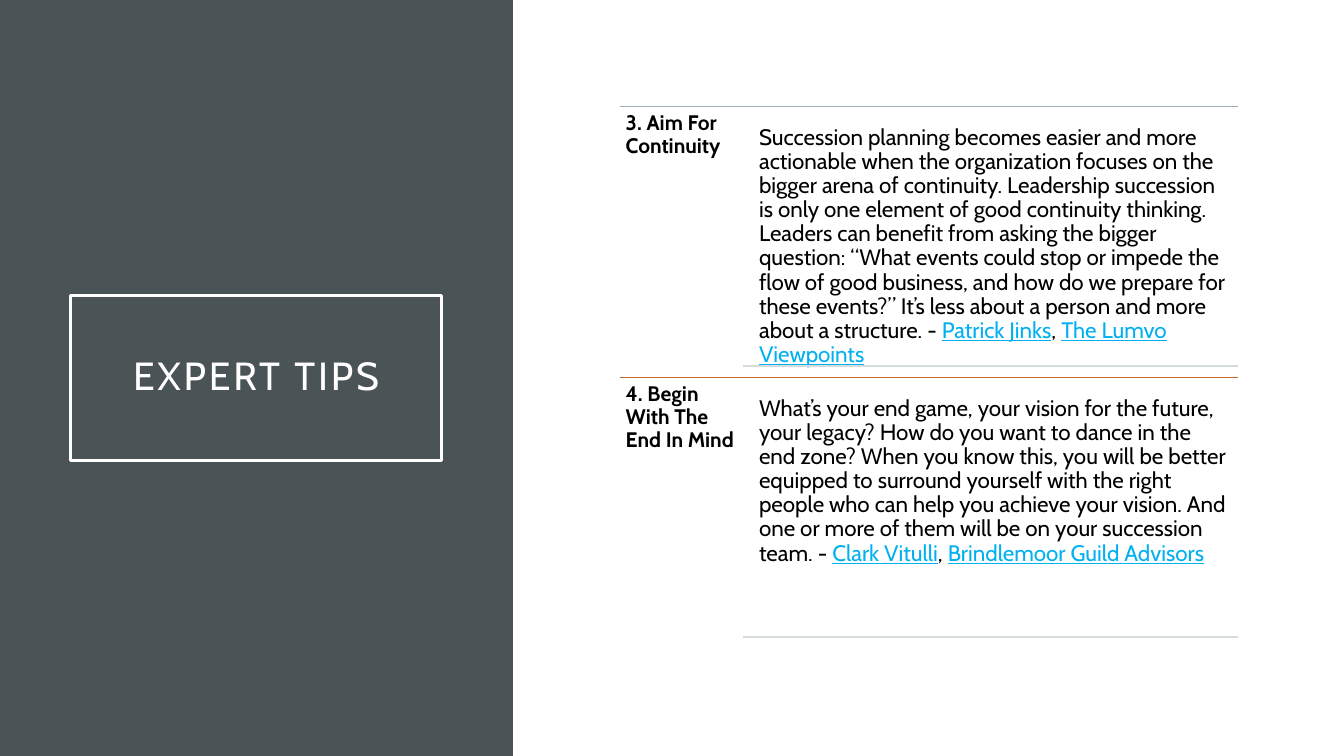
from lxml import etree
from pptx import Presentation
from pptx import util as u
from pptx.dml.color import RGBColor
from pptx.enum import shapes, text
from pptx.oxml.ns import qn

COLORS = {"panel": "4A5356", "white": "FFFFFF", "black": "000000", "link": "00B0F0",
          "blue_rule": "9BAFB5", "orange_rule": "C96731", "grey_rule": "D5DCDE"}


def write(sp, runs, size, inset, color="black", bold=False, align=text.PP_ALIGN.LEFT,
          anchor=text.MSO_ANCHOR.TOP, spacing=None):
    """Fill a shape with one paragraph; runs are (text, is_link) pairs."""
    tf = sp.text_frame
    tf.word_wrap = True
    tf.auto_size = text.MSO_AUTO_SIZE.NONE
    tf.vertical_anchor = anchor
    tf.margin_left = tf.margin_top = tf.margin_right = tf.margin_bottom = u.Cm(inset)
    p = tf.paragraphs[0]
    p.alignment = align
    p.line_spacing = 0.9
    for words, is_link in runs:
        r = p.add_run()
        r.text = words
        r.font.name = "Cabin"
        r.font.size = u.Pt(size)
        r.font.bold = bold
        r.font.underline = is_link
        r.font.color.rgb = RGBColor.from_string(COLORS["link" if is_link else color])
        if spacing:
            r.font._element.set("spc", str(spacing * 100))


def add_rule(left, top, color, width):
    """Draw a horizontal rule that ends at the right edge of the list."""
    rule = s.shapes.add_connector(shapes.MSO_CONNECTOR.STRAIGHT,
                                  u.Cm(left), u.Cm(top), u.Cm(31.19), u.Cm(top))
    rule.line.color.rgb = RGBColor.from_string(COLORS[color])
    rule.line.width = u.Pt(width)
    etree.SubElement(rule._element.spPr, qn("a:effectLst"))


prs = Presentation()
prs.slide_width, prs.slide_height = u.Cm(33.87), u.Cm(19.05)
s = prs.slides.add_slide(prs.slide_layouts[5])

# Dark panel, placed behind the title
panel = s.shapes.add_shape(shapes.MSO_SHAPE.RECTANGLE, 0, 0, u.Cm(12.93), prs.slide_height)
panel.shadow.inherit = False
panel.fill.solid()
panel.fill.fore_color.rgb = RGBColor.from_string(COLORS["panel"])
panel.line.fill.background()
title = s.shapes.title
title.element.addprevious(panel.element)

# Framed title
title.left, title.top, title.width, title.height = u.Cm(1.78), u.Cm(7.44), u.Cm(9.35), u.Cm(4.17)
title.line.color.rgb = RGBColor.from_string(COLORS["white"])
title.line.width = u.Pt(2.5)
write(title, [("EXPERT TIPS", False)], 28, 0.5, color="white", spacing=2,
      align=text.PP_ALIGN.CENTER, anchor=text.MSO_ANCHOR.MIDDLE)

# Tips: rule colour, heading, advice, expert, organisation
tips = [
    ("blue_rule", "3. Aim For Continuity",
     "Succession planning becomes easier and more actionable when the organization focuses on "
     "the bigger arena of continuity. Leadership succession is only one element of good "
     "continuity thinking. Leaders can benefit from asking the bigger question: “What events "
     "could stop or impede the flow of good business, and how do we prepare for these events?” "
     "It’s less about a person and more about a structure. - ",
     "Patrick Jinks", "The Lumvo Viewpoints"),
    ("orange_rule", "4. Begin With The End In Mind",
     "What’s your end game, your vision for the future, your legacy? How do you want to dance "
     "in the end zone? When you know this, you will be better equipped to surround yourself "
     "with the right people who can help you achieve your vision. And one or more of them will "
     "be on your succession team. - ",
     "Clark Vitulli", "Brindlemoor Guild Advisors"),
]
list_left, list_top, row_height = 15.62, 2.69, 6.83

for i, (rule_color, heading, advice, expert, organisation) in enumerate(tips):
    top = list_top + i * row_height
    add_rule(list_left, top, rule_color, 0.5)
    heading_box = s.shapes.add_textbox(u.Cm(list_left), u.Cm(top), u.Cm(3.12), u.Cm(row_height))
    write(heading_box, [(heading, False)], 15, 0.15, bold=True)
    advice_box = s.shapes.add_textbox(u.Cm(18.95), u.Cm(top + 0.3), u.Cm(12.22), u.Cm(6.22))
    write(advice_box, [(advice, False), (expert, True), (", ", False), (organisation, True)],
          16, 0.18)
    add_rule(18.72, top + 6.53, "grey_rule", 1)

prs.save("out.pptx")
